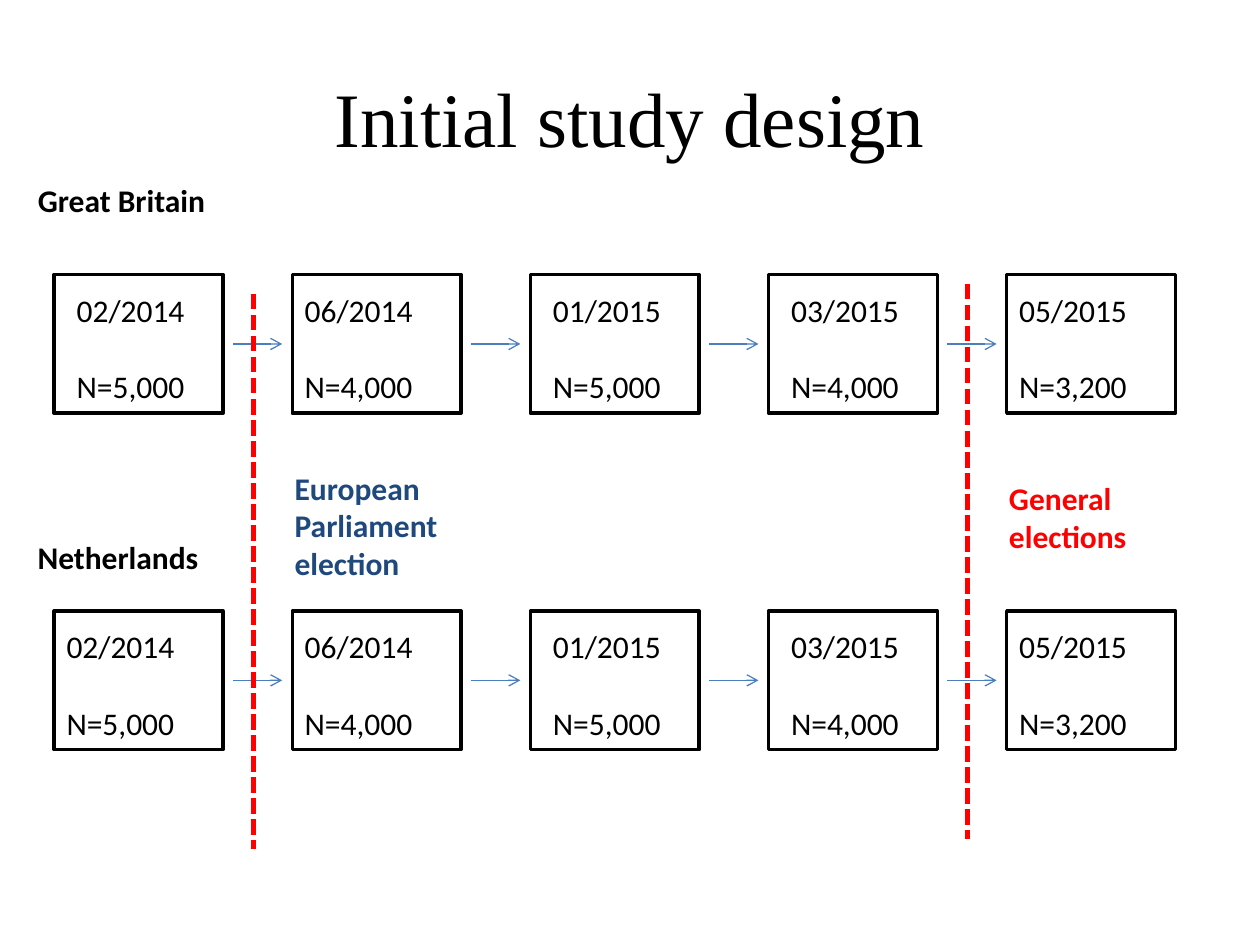
from dataclasses import dataclass

import pptx
import pptx.dml.color
import pptx.enum.dml
import pptx.enum.shapes
import pptx.enum.text
import pptx.oxml
import pptx.oxml.ns
import pptx.util

Inches = pptx.util.Inches
Pt = pptx.util.Pt
Align = pptx.enum.text.PP_ALIGN
Dash = pptx.enum.dml.MSO_LINE

LEFT, STEP, WIDE, HIGH = 0.43, 1.89, 1.34, 1.1
GAP = 0.08


@dataclass
class Wave:
    date: str
    size: str


@dataclass
class Land:
    top: float
    insets: tuple[float, ...]


@dataclass
class Label:
    text: str
    left: float
    top: float
    width: float
    height: float
    color: str = "000000"
    align: Align = Align.LEFT


WAVES = [
    Wave("02/2014", "N=5,000"),
    Wave("06/2014", "N=4,000"),
    Wave("01/2015", "N=5,000"),
    Wave("03/2015", "N=4,000"),
    Wave("05/2015", "N=3,200"),
]
LANDS = [
    Land(2.18, (GAP, 0, GAP, GAP, 0)),
    Land(4.85, (0, 0, GAP, GAP, 0)),
]
LABELS = [
    Label("Great Britain", 0, 1.39, 1.93, 0.4, align=Align.CENTER),
    Label("Netherlands", 0.2, 4.22, 1.57, 0.4),
    Label("European Parliament election", 2.24, 3.67, 1.57, 1.01, "1F497D"),
    Label("General elections", 7.91, 3.75, 1.5, 0.71, "FF0000"),
]
VOTES = [(2.01, 2.33), (7.68, 2.25)]
SPAN = 4.41


def rgb(code: str) -> pptx.dml.color.RGBColor:
    return pptx.dml.color.RGBColor.from_string(code)


def style(par, size: float, color: str, face: str = "Calibri", bold: bool = False) -> None:
    par.font.name = face
    par.font.size = Pt(size)
    par.font.bold = bold
    par.font.color.rgb = rgb(color)


def add_text(shapes, left: float, top: float, width: float, height: float):
    box = shapes.add_textbox(Inches(left), Inches(top), Inches(width), Inches(height))
    box.text_frame.word_wrap = True
    return box.text_frame


def add_line(shapes, start: tuple[float, float], end: tuple[float, float],
             color: str, weight: float):
    line = shapes.add_connector(
        pptx.enum.shapes.MSO_CONNECTOR.STRAIGHT,
        *(Inches(v) for v in (*start, *end)))
    line.line.color.rgb = rgb(color)
    line.line.width = Pt(weight)
    line._element.spPr.append(pptx.oxml.parse_xml(
        f"<a:effectLst {pptx.oxml.ns.nsdecls('a')}/>"))
    return line


def add_arrow(shapes, left: float, right: float, y: float) -> None:
    arrow = add_line(shapes, (left, y), (right, y), "4B7EBC", 0.75)
    arrow.line._get_or_add_ln().append(pptx.oxml.parse_xml(
        f"<a:tailEnd {pptx.oxml.ns.nsdecls('a')} type='arrow'/>"))


def add_frame(shapes, left: float, top: float) -> None:
    frame = shapes.add_shape(
        pptx.enum.shapes.MSO_SHAPE.RECTANGLE,
        Inches(left), Inches(top), Inches(WIDE), Inches(HIGH))
    frame.shadow.inherit = False
    frame.fill.background()
    frame.line.color.rgb = rgb("000000")
    frame.line.width = Pt(2)


def add_wave(shapes, wave: Wave, left: float, top: float, inset: float) -> None:
    text = add_text(shapes, left + inset, top, WIDE - 2 * inset, 1.01)
    text.text = f"{wave.date}\n{wave.size}"
    for par in text.paragraphs:
        style(par, 18, "000000")
    text.paragraphs[1].space_before = Pt(22)


def add_land(shapes, land: Land) -> None:
    group = shapes.add_group_shape().shapes
    for i, (wave, inset) in enumerate(zip(WAVES, land.insets)):
        left = LEFT + i * STEP
        add_frame(group, left, land.top)
        if i:
            add_arrow(group, left - STEP + WIDE + GAP, left - GAP, land.top + HIGH / 2)
        add_wave(shapes, wave, left, land.top + GAP, inset)


def add_label(shapes, label: Label) -> None:
    text = add_text(shapes, label.left, label.top, label.width, label.height)
    text.text = label.text
    par = text.paragraphs[0]
    par.alignment = label.align
    style(par, 18, label.color, bold=True)


def add_title(title) -> None:
    title.left, title.top = Inches(0.5), Inches(0.3)
    title.width, title.height = Inches(9), Inches(1.25)
    title.text_frame.text = "Initial study design"
    title.text_frame.vertical_anchor = pptx.enum.text.MSO_ANCHOR.MIDDLE
    par = title.text_frame.paragraphs[0]
    par.alignment = Align.CENTER
    style(par, 44, "000000", "Times New Roman")


def main() -> None:
    deck = pptx.Presentation()
    deck.slide_width, deck.slide_height = Inches(10), Inches(7.5)
    slide = deck.slides.add_slide(deck.slide_layouts[5])
    shapes = slide.shapes
    add_title(shapes.title)
    for land in LANDS:
        add_land(shapes, land)
    for x, top in VOTES:
        line = add_line(shapes, (x, top), (x, top + SPAN), "FF0000", 3)
        line.line.dash_style = Dash.SQUARE_DOT
    for label in LABELS:
        add_label(shapes, label)
    deck.save("out.pptx")


if __name__ == "__main__":
    main()
